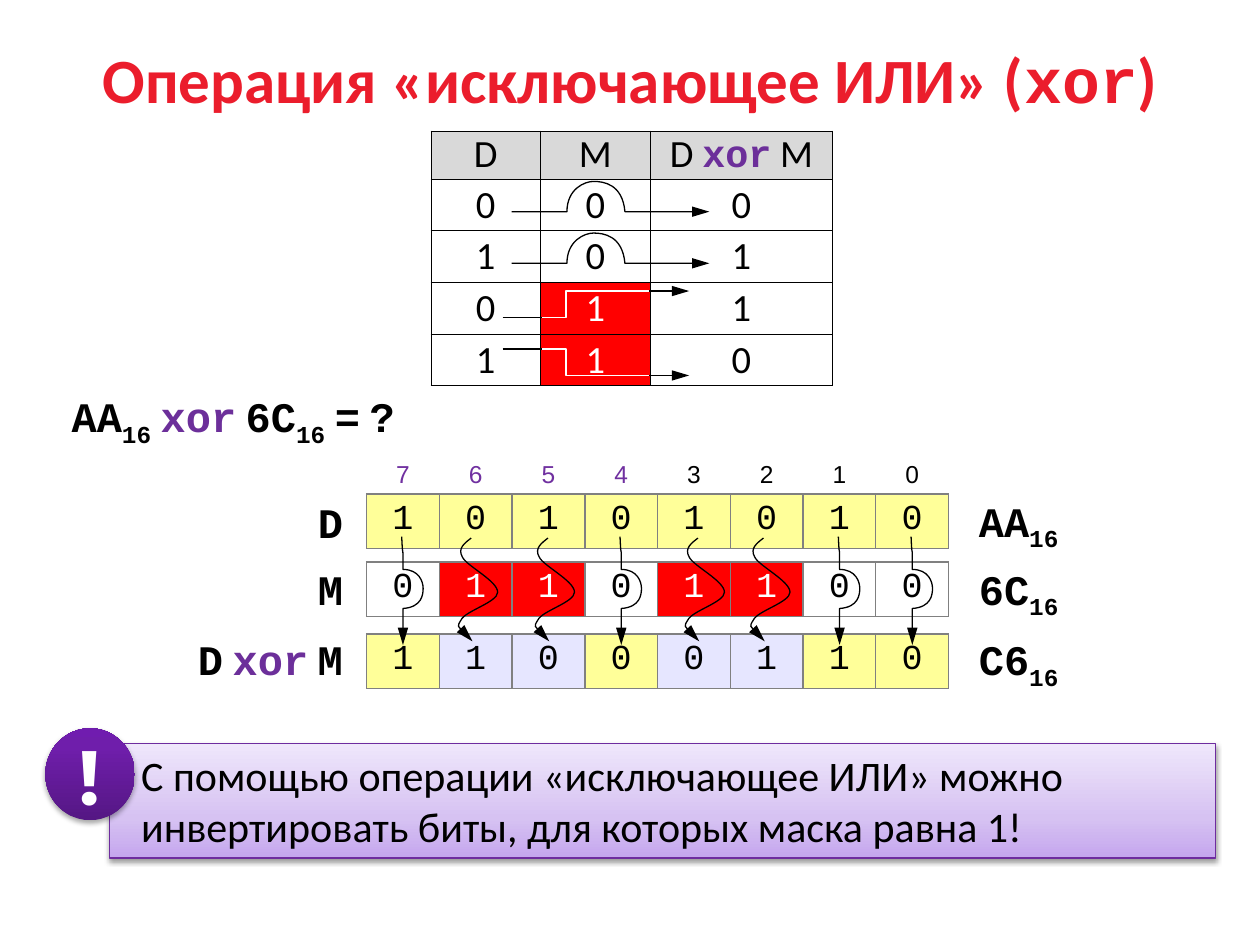
from dataclasses import dataclass
from typing import Optional

from lxml.etree import SubElement
from pptx import Presentation
from pptx.dml.color import RGBColor
from pptx.enum.shapes import MSO_CONNECTOR, MSO_SHAPE
from pptx.enum.text import MSO_ANCHOR, MSO_AUTO_SIZE, PP_ALIGN
from pptx.oxml.ns import qn
from pptx.util import Inches, Pt

BLACK = RGBColor(0x00, 0x00, 0x00)
WHITE = RGBColor(0xFF, 0xFF, 0xFF)
RED = RGBColor(0xFF, 0x00, 0x00)
TITLE_RED = RGBColor(0xEB, 0x1D, 0x2C)
PURPLE = RGBColor(0x6C, 0x2F, 0x9A)
INDEX_PURPLE = RGBColor(0x70, 0x30, 0xA0)
NOTE_BORDER = RGBColor(0x6E, 0x2C, 0x9F)
HEADER_GRAY = RGBColor(0xD9, 0xD9, 0xD9)
BORDER_GRAY = RGBColor(0x80, 0x80, 0x80)
YELLOW = RGBColor(0xFF, 0xFF, 0x99)
LAVENDER = RGBColor(0xE6, 0xE6, 0xFF)
NOTE_GRADIENT = {0: "C5A6EE", 35: "D6C2F2", 100: "EFE7FB"}
BADGE_GRADIENT = {0: "551784", 80: "6F1EAB", 100: "701CAF"}

BITS_LEFT, BITS_WIDTH, BIT_COUNT = 2.91, 4.62, 8
Point = tuple[float, float]


@dataclass(frozen=True)
class TextRun:
    text: str
    size: float = 24
    font: str = "Courier New"
    color: RGBColor = BLACK
    bold: bool = True
    subscript: bool = False


@dataclass(frozen=True)
class Cell:
    runs: list[TextRun]
    fill: Optional[RGBColor] = None
    anchor: MSO_ANCHOR = MSO_ANCHOR.TOP


@dataclass(frozen=True)
class BitRow:
    top: float
    label_top: float
    value_top: float
    bits: str
    fills: list[RGBColor]
    label: list[TextRun]
    value: str


SPACE = TextRun(" ", font="Calibri")
XOR = TextRun("xor", color=PURPLE)
BASE_16 = TextRun("16", subscript=True)


def add_runs(paragraph, runs: list[TextRun], alignment=PP_ALIGN.LEFT) -> None:
    paragraph.alignment = alignment
    for item in runs:
        run = paragraph.add_run()
        run.text = item.text
        run.font.size = Pt(item.size)
        run.font.name = item.font
        run.font.bold = item.bold
        run.font.color.rgb = item.color
        if item.subscript:
            run._r.get_or_add_rPr().set("baseline", "-25000")


def add_text(slide, left, top, width, runs, alignment=PP_ALIGN.LEFT) -> None:
    box = slide.shapes.add_textbox(Inches(left), Inches(top), Inches(width), Inches(0.51))
    box.text_frame.word_wrap = True
    add_runs(box.text_frame.paragraphs[0], runs, alignment)


def add_borders(cell, color: RGBColor, width: float) -> None:
    properties = cell._tc.get_or_add_tcPr()
    for side in ("a:lnL", "a:lnR", "a:lnT", "a:lnB"):
        line = SubElement(properties, qn(side), w=str(Pt(width)))
        SubElement(SubElement(line, qn("a:solidFill")), qn("a:srgbClr"), val=str(color))


def add_grid(slide, left: float, top: float, widths: list[float], heights: list[float],
             rows: list[list[Cell]], border: Optional[tuple[RGBColor, float]] = None,
             margins: Point = (0.1, 0.05)) -> None:
    table = slide.shapes.add_table(len(heights), len(widths), Inches(left), Inches(top),
                                   Inches(sum(widths)), Inches(sum(heights))).table
    table.first_row = table.horz_banding = False
    for column, width in zip(table.columns, widths):
        column.width = Inches(width)
    for row, height, contents in zip(table.rows, heights, rows):
        row.height = Inches(height)
        for cell, content in zip(row.cells, contents):
            cell.margin_left = cell.margin_right = Inches(margins[0])
            cell.margin_top = cell.margin_bottom = Inches(margins[1])
            cell.vertical_anchor = content.anchor
            if border:
                add_borders(cell, *border)
            if content.fill is None:
                cell.fill.background()
            else:
                cell.fill.solid()
                cell.fill.fore_color.rgb = content.fill
            add_runs(cell.text_frame.paragraphs[0], content.runs, PP_ALIGN.CENTER)


def style_line(line, color: RGBColor, width: float, arrow: bool) -> None:
    line.color.rgb = color
    line.width = Pt(width)
    if arrow:
        SubElement(line._get_or_add_ln(), qn("a:tailEnd"), type="triangle", w="med", len="lg")


def add_path(slide, start: Point, *segments: list[Point], color=BLACK, width=0.75,
             arrow=True) -> None:
    """Draw an outline: a segment of one point is a line, one of three a Bezier curve."""
    points = [(Inches(x), Inches(y)) for segment in segments for x, y in segment]
    builder = slide.shapes.build_freeform(Inches(start[0]), Inches(start[1]), scale=1.0)
    builder.add_line_segments(points, close=False)
    shape = builder.convert_to_shape()
    steps = iter(list(shape._element.iter(qn("a:lnTo"))))
    for segment in segments:
        first, *others = [next(steps) for _ in segment]
        if others:
            bezier = first.getparent().makeelement(qn("a:cubicBezTo"))
            first.addprevious(bezier)
            for step in (first, *others):
                bezier.append(step[0])
                step.getparent().remove(step)
    shape.fill.background()
    shape.shadow.inherit = False
    style_line(shape.line, color, width, arrow)


def add_straight(slide, start: float, end: float, y: float, arrow: bool) -> None:
    connector = slide.shapes.add_connector(MSO_CONNECTOR.STRAIGHT, Inches(start), Inches(y),
                                           Inches(end), Inches(y))
    style_line(connector.line, BLACK, 0.75, arrow)
    SubElement(connector._element.spPr, qn("a:effectLst"))


def add_hop_arrow(slide, y: float) -> None:
    add_path(slide, (4.06, y), [(4.06, y), (4.05, y), (4.5, y)],
             [(4.5, y - 0.18), (4.64, y - 0.24), (4.71, y - 0.24)],
             [(4.79, y - 0.24), (4.94, y - 0.22), (4.96, y)],
             [(5.29, y), (5.63, y), (5.63, y)])


def add_step_arrow(slide, y: float, end_y: float) -> None:
    add_path(slide, (4.29, y), [(4.49, y)], [(4.49, end_y)], [(5.16, end_y)],
             color=WHITE, width=1, arrow=False)
    add_straight(slide, 5.15, 5.47, end_y, True)
    add_straight(slide, 3.99, 4.3, y, False)


def add_bypass_arrow(slide, x: float) -> None:
    add_path(slide, (x - 0.01, 4.26), [(x, 4.49), (x, 4.26), (x, 4.52)],
             [(x + 0.13, 4.52), (x + 0.16, 4.62), (x + 0.16, 4.67)],
             [(x + 0.16, 4.72), (x + 0.15, 4.82), (x, 4.83)], [(x, 5.12)])


def add_flip_arrow(slide, x: float) -> None:
    add_path(slide, (x, 4.27), [(x - 0.05, 4.31), (x - 0.11, 4.35), (x - 0.07, 4.42)],
             [(x - 0.04, 4.49), (x + 0.21, 4.61), (x + 0.21, 4.7)],
             [(x + 0.21, 4.78), (x - 0.05, 4.85), (x - 0.08, 4.92)],
             [(x - 0.12, 4.98), (x - 0.05, 5.04), (x + 0.01, 5.09)])


def add_glossy_shape(slide, kind, left, top, width, height, gradient, shadow_alpha, distance):
    shape = slide.shapes.add_shape(kind, Inches(left), Inches(top), Inches(width), Inches(height))
    shape.fill.gradient()
    shape.fill.gradient_angle = 90
    properties = shape._element.spPr
    stops = properties.find(qn("a:gradFill")).find(qn("a:gsLst"))
    for stop in list(stops):
        stops.remove(stop)
    for position, color in gradient.items():
        stop = SubElement(stops, qn("a:gs"), pos=str(position * 1000))
        SubElement(stop, qn("a:srgbClr"), val=color)
    shape.line.fill.background()
    shape.shadow.inherit = False
    shadow = SubElement(properties.find(qn("a:effectLst")), qn("a:outerShdw"), rotWithShape="0",
                        blurRad=str(Pt(3.1)), dist=str(Pt(distance)), dir="5400000")
    color = SubElement(shadow, qn("a:srgbClr"), val=str(BLACK))
    SubElement(color, qn("a:alpha"), val=str(shadow_alpha * 1000))
    return shape


def add_title(slide) -> None:
    title = slide.shapes.title
    title.left, title.top, title.width, title.height = map(Inches, (0, 0.3, 10, 0.64))
    title.text_frame.auto_size = MSO_AUTO_SIZE.NONE
    title.text_frame.vertical_anchor = MSO_ANCHOR.MIDDLE
    add_runs(title.text_frame.paragraphs[0], [
        TextRun("Операция «исключающее ИЛИ» (", 36, "Calibri", TITLE_RED),
        TextRun("xor", 36, color=TITLE_RED), TextRun(")", 36, "Calibri", TITLE_RED),
    ], PP_ALIGN.CENTER)


def add_truth_table(slide) -> None:
    def plain(text: str, color: RGBColor = BLACK) -> TextRun:
        return TextRun(text, 22, "Calibri", color, False)

    headers = [[plain("D")], [plain("M")],
               [plain("D "), TextRun("xor", 22, color=PURPLE), plain(" M")]]
    rows = [[Cell(runs, HEADER_GRAY) for runs in headers]]
    for d, m in ((0, 0), (1, 0), (0, 1), (1, 1)):
        mask = Cell([plain(str(m), WHITE if m else BLACK)], RED if m else WHITE, MSO_ANCHOR.MIDDLE)
        data, result = (Cell([plain(str(bit))], anchor=MSO_ANCHOR.MIDDLE) for bit in (d, d ^ m))
        rows.append([data, mask, result])
    add_grid(slide, 3.42, 1.04, [0.87, 0.87, 1.45], [0.37] + [0.41] * 4, rows,
             (BLACK, 0.5), (0.14, 0))
    for y in (1.68, 2.09):
        add_hop_arrow(slide, y)
    add_step_arrow(slide, 2.52, 2.31)
    add_step_arrow(slide, 2.77, 2.98)


def add_bit_example(slide) -> None:
    add_text(slide, 0.47, 3.05, 2.9, [TextRun("AA"), BASE_16, SPACE, XOR, SPACE, TextRun("6C"),
                                      BASE_16, SPACE, TextRun("="), SPACE, TextRun("?")])
    pitch = BITS_WIDTH / BIT_COUNT
    widths = [pitch] * BIT_COUNT
    indexes = [Cell([TextRun(str(i), 14, "Arial", INDEX_PURPLE if i > 3 else BLACK, False)])
               for i in reversed(range(BIT_COUNT))]
    add_grid(slide, BITS_LEFT, 3.61, widths, [0.33], [indexes])

    data, mask, result = (f"{value:08b}" for value in (0xAA, 0x6C, 0xAA ^ 0x6C))
    bit_rows = [
        BitRow(3.92, 3.89, 3.88, data, [YELLOW] * BIT_COUNT, [TextRun("D")], "AA"),
        BitRow(4.46, 4.42, 4.42, mask, [RED if bit == "1" else WHITE for bit in mask],
               [TextRun("M")], "6С"),
        BitRow(5.03, 4.98, 4.98, result, [LAVENDER if bit == "1" else YELLOW for bit in mask],
               [TextRun("D"), SPACE, XOR, SPACE, TextRun("M")], "C6"),
    ]
    for row in bit_rows:
        cells = [Cell([TextRun(bit, 20, color=WHITE if fill == RED else BLACK, bold=False)], fill)
                 for bit, fill in zip(row.bits, row.fills)]
        add_grid(slide, BITS_LEFT, row.top, widths, [0.43], [cells], (BORDER_GRAY, 1))
        label_width = 0.48 if len(row.label) == 1 else 1.4
        add_text(slide, 2.82 - label_width, row.label_top, label_width, row.label, PP_ALIGN.RIGHT)
        add_text(slide, 7.67, row.value_top, 0.88, [TextRun(row.value), BASE_16])
    for column, bit in enumerate(mask):
        if bit == "0":
            add_bypass_arrow(slide, BITS_LEFT + pitch * (column + 0.5))
    for x in (3.74, 4.35, 5.54, 6.06):
        add_flip_arrow(slide, x)


def add_note(slide) -> None:
    note = add_glossy_shape(slide, MSO_SHAPE.RECTANGLE, 0.87, 5.9, 8.78, 0.91,
                            NOTE_GRADIENT, 38, 1.6)
    style_line(note.line, NOTE_BORDER, 0.75, False)
    frame = note.text_frame
    frame.margin_left = Inches(0.25)
    frame.vertical_anchor = MSO_ANCHOR.TOP
    paragraph = frame.paragraphs[0]
    add_runs(paragraph, [TextRun("С помощью операции «исключающее ИЛИ» можно",
                                 font="Calibri", bold=False)])
    paragraph.add_line_break()
    add_runs(paragraph, [TextRun("инвертировать биты, для которых маска равна 1!",
                                 font="Calibri", bold=False)])
    badge = add_glossy_shape(slide, MSO_SHAPE.OVAL, 0.36, 5.78, 0.71, 0.73,
                             BADGE_GRADIENT, 35, 1.8)
    badge.text_frame.word_wrap = False
    badge.text_frame.vertical_anchor = MSO_ANCHOR.MIDDLE
    add_runs(badge.text_frame.paragraphs[0], [TextRun("!", 44, "Montserrat", WHITE)],
             PP_ALIGN.CENTER)


def main() -> None:
    presentation = Presentation()
    presentation.slide_width, presentation.slide_height = Inches(10), Inches(7.5)
    slide = presentation.slides.add_slide(presentation.slide_layouts[5])
    add_title(slide)
    add_truth_table(slide)
    add_bit_example(slide)
    add_note(slide)
    presentation.save("out.pptx")


if __name__ == "__main__":
    main()
